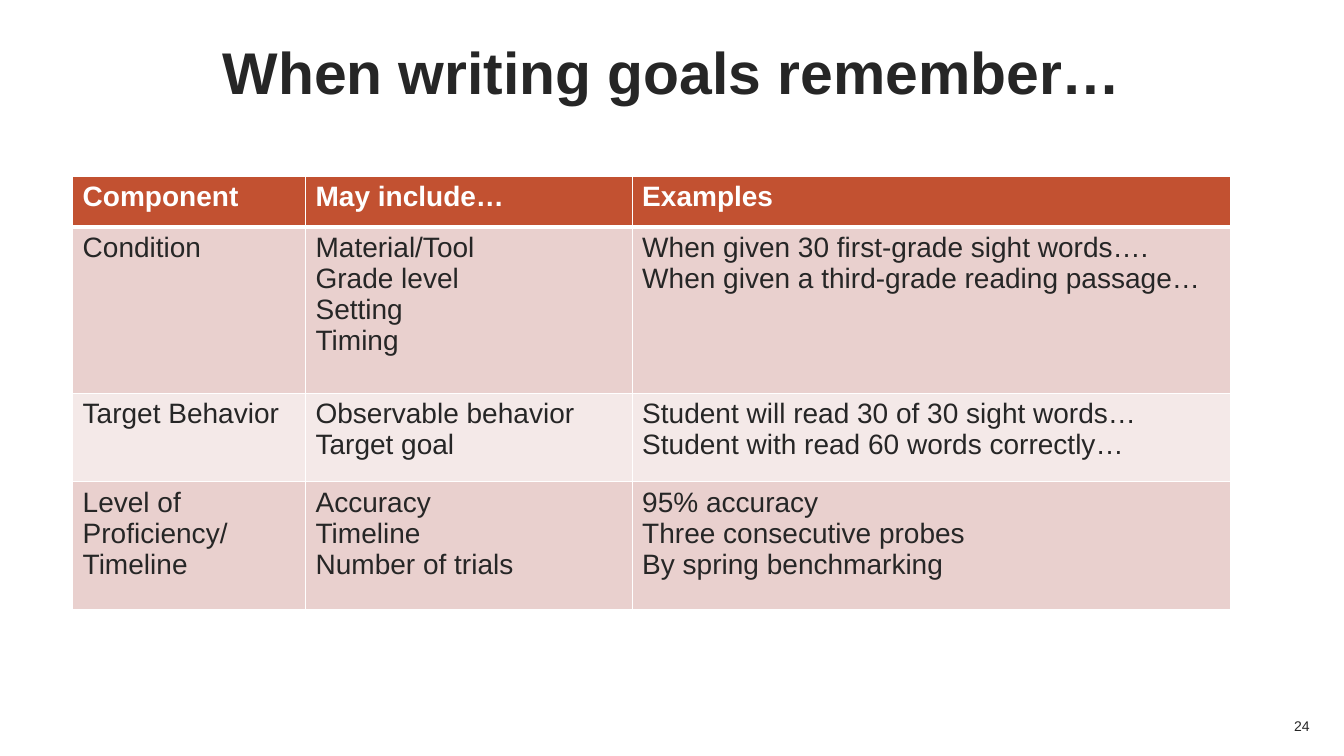
from lxml import etree
from pptx import Presentation
from pptx.dml.color import RGBColor
from pptx.enum.text import MSO_ANCHOR as Anchor, PP_ALIGN as Align
from pptx.oxml.ns import qn
from pptx.util import Inches, Pt

TITLE = "When writing goals remember…"
PAGE = "24"
ROWS = [
    (["Component"], ["May include…"], ["Examples"]),
    (["Condition"],
     ["Material/Tool", "Grade level", "Setting", "Timing"],
     ["When given 30 first-grade sight words….",
      "When given a third-grade reading passage…"]),
    (["Target Behavior"],
     ["Observable behavior", "Target goal"],
     ["Student will read 30 of 30 sight words…",
      "Student with read 60 words correctly…"]),
    (["Level of Proficiency/ Timeline"],
     ["Accuracy", "Timeline", "Number of trials"],
     ["95% accuracy", "Three consecutive probes", "By spring benchmarking"]),
]
COL_WIDTHS = [2.31, 3.24, 5.94]
ROW_HEIGHTS = [0.5, 1.65, 0.88, 1.27]
COLORS = {"text": "262626", "white": "FFFFFF", "header": "C25131",
          "odd": "E9D0CE", "even": "F4E9E8"}


def write(tf, lines, size, color="text", bold=False, align=Align.LEFT):
    tf.text = "\n".join(lines)
    for p in tf.paragraphs:
        p.alignment = align
        p.font.color.rgb = RGBColor.from_string(COLORS[color])
        for name, value in {"name": "Arial", "size": Pt(size), "bold": bold}.items():
            setattr(p.font, name, value)


def set_frame(tf, anchor, wrap):
    values = {"margin_left": 0, "margin_right": 0, "margin_top": 0,
              "margin_bottom": 0, "vertical_anchor": anchor, "word_wrap": wrap}
    for name, value in values.items():
        setattr(tf, name, value)


def add_borders(cell, widths):
    tcPr = cell._tc.get_or_add_tcPr()
    for side, width in widths.items():
        ln = etree.SubElement(tcPr, qn(f"a:ln{side}"), w=str(Pt(width)))
        fill = etree.SubElement(ln, qn("a:solidFill"))
        etree.SubElement(fill, qn("a:srgbClr"), val=COLORS["white"])


prs = Presentation()
prs.slide_width, prs.slide_height = Inches(13.33), Inches(7.5)
s = prs.slides.add_slide(prs.slide_layouts[5])

# Title
title = s.shapes.title
title.left, title.top = Inches(0.5), Inches(0)
title.width, title.height = Inches(12.33), Inches(1.4)
set_frame(title.text_frame, Anchor.MIDDLE, True)
write(title.text_frame, [TITLE], 42, bold=True, align=Align.CENTER)

# Goal components table
table = s.shapes.add_table(len(ROWS), len(COL_WIDTHS), Inches(0.72), Inches(1.75),
                           Inches(sum(COL_WIDTHS)), Inches(sum(ROW_HEIGHTS))).table
for column, width in zip(table.columns, COL_WIDTHS):
    column.width = Inches(width)
for i, (row, height, texts) in enumerate(zip(table.rows, ROW_HEIGHTS, ROWS)):
    row.height = Inches(height)
    header = i == 0
    fill = "header" if header else "odd" if i % 2 else "even"
    for cell, lines in zip(row.cells, texts):
        add_borders(cell, {"L": 1, "R": 1, "T": 3 if i == 1 else 1,
                           "B": 3 if header else 1})
        cell.fill.solid()
        cell.fill.fore_color.rgb = RGBColor.from_string(COLORS[fill])
        write(cell.text_frame, lines, 20, "white" if header else "text", header)

# Slide number
number = s.shapes.add_textbox(Inches(12.82), Inches(7.12), Inches(0.17), Inches(0.17))
set_frame(number.text_frame, Anchor.BOTTOM, False)
write(number.text_frame, [PAGE], 10, align=Align.RIGHT)

prs.save("out.pptx")
